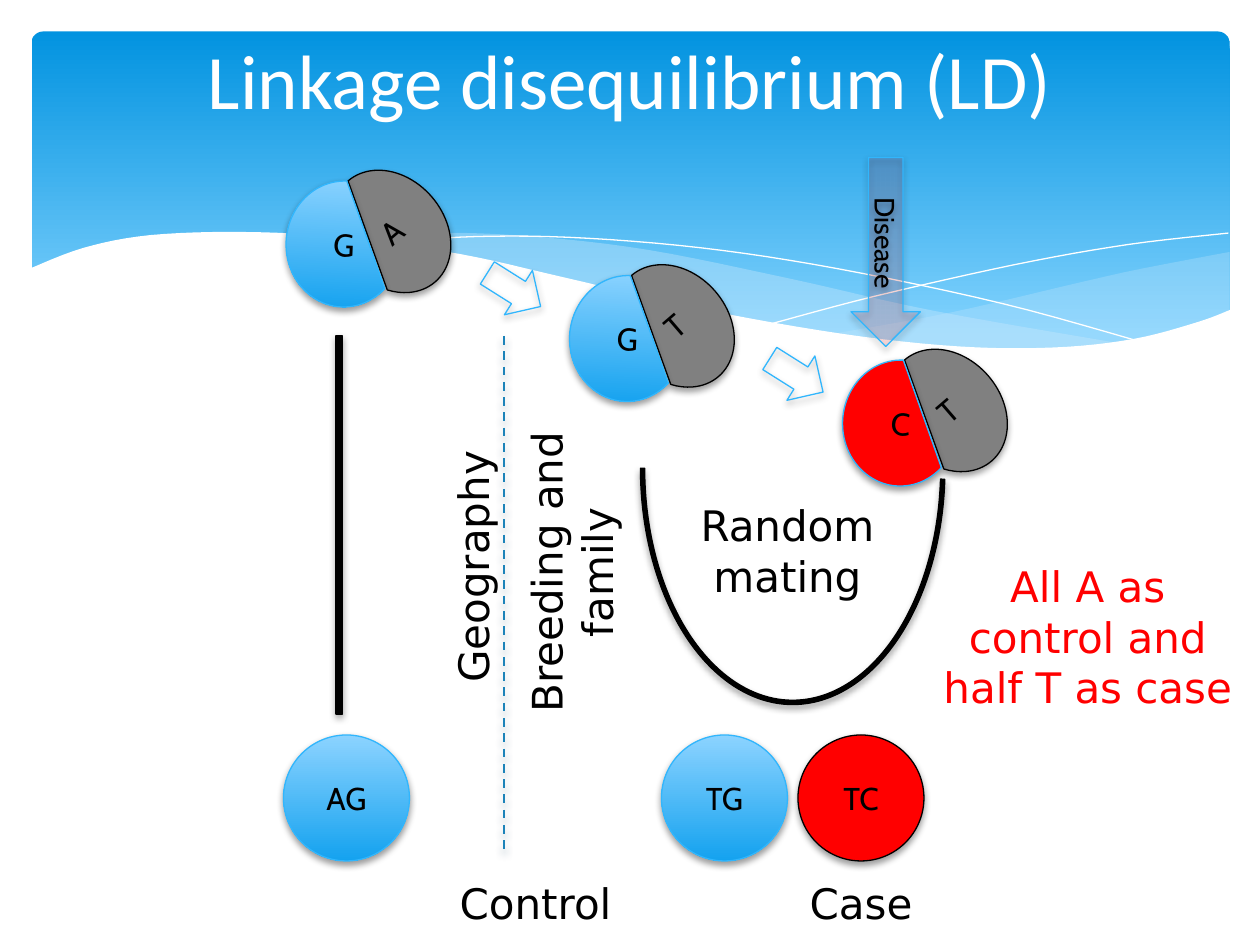
from lxml.etree import SubElement
from pptx import Presentation
from pptx.dml.color import RGBColor
from pptx.enum.dml import MSO_LINE
from pptx.enum.shapes import MSO_CONNECTOR, MSO_SHAPE as SHAPE
from pptx.enum.text import MSO_ANCHOR as ANCHOR, MSO_AUTO_SIZE as AUTO, PP_ALIGN
from pptx.oxml.ns import qn
from pptx.util import Inches, Pt

BLACK = RGBColor(0x00, 0x00, 0x00)
WHITE = RGBColor(0xFF, 0xFF, 0xFF)
RED = RGBColor(0xFF, 0x00, 0x00)
GRAY = RGBColor(0x80, 0x80, 0x80)
SKY = RGBColor(0x31, 0xB6, 0xFD)
DIVIDER = RGBColor(0x1C, 0x83, 0xB9)
DIVIDER_SHADOW = RGBColor(0x0F, 0x40, 0x5B)
MIST = RGBColor(0xC6, 0xE7, 0xFC)
# Gradients: (top colour, bottom colour, end position)
BANNER = (RGBColor(0x02, 0x93, 0xE0), RGBColor(0x83, 0xD3, 0xFE), 0.9)
BALL = (RGBColor(0x8C, 0xD3, 0xFF), RGBColor(0x14, 0xA2, 0xEF), 1)

COLS, ROWS = 120, 90  # grid cells of 1/12 inch
SHADOW = (BLACK, 38, 4, 2)  # colour, opacity %, blur pt, distance pt


def smooth(knots, steps=6):
    """Sample a Catmull-Rom curve that passes through the knots."""
    ends = [knots[0], *knots, knots[-1]]
    points = [knots[0]]
    for a, b, c, d in zip(ends, ends[1:], ends[2:], ends[3:]):
        for i in range(1, steps + 1):
            t = i / steps
            points.append(tuple(
                (2 * q + (r - p) * t + (2 * p - 5 * q + 4 * r - s) * t ** 2
                 + (3 * q - p - 3 * r + s) * t ** 3) / 2
                for p, q, r, s in zip(a, b, c, d)))
    return points


class Canvas:
    """Draws on one slide; all lengths are grid columns and rows."""

    label = {"name": "Cabin", "size": Pt(18)}
    note = {"name": "DejaVu Sans", "size": Pt(24)}

    def __init__(self, prs):
        self.slide = prs.slides.add_slide(prs.slide_layouts[6])
        self.shapes = self.slide.shapes
        self.cell_w, self.cell_h = prs.slide_width / COLS, prs.slide_height / ROWS

    def emu(self, *lengths):
        """Turn alternating columns and rows into EMU."""
        return [round(n * (self.cell_h if i % 2 else self.cell_w))
                for i, n in enumerate(lengths)]

    def paint(self, sp, fill, line, alpha=None, width=0.75):
        if fill is None:
            sp.fill.background()
        elif isinstance(fill, RGBColor):
            sp.fill.solid()
            sp.fill.fore_color.rgb = fill
            if alpha:
                color = sp._element.spPr.find(qn("a:solidFill"))[0]
                SubElement(color, qn("a:alpha"), val=str(alpha * 1000))
        else:
            sp.fill.gradient()
            sp.fill.gradient_angle = 270
            for stop, color, place in zip(sp.fill.gradient_stops, fill, (0, fill[2])):
                stop.color.rgb, stop.position = color, place
        if line is None:
            sp.line.fill.background()
        else:
            sp.line.color.rgb, sp.line.width = line, Pt(width)
        sp.shadow.inherit = False

    def cast_shadow(self, sp, color, opacity, blur, dist):
        spPr = sp._element.spPr
        effects = spPr.find(qn("a:effectLst"))
        if effects is None:
            effects = SubElement(spPr, qn("a:effectLst"))
        shadow = SubElement(effects, qn("a:outerShdw"), blurRad=str(Pt(blur)),
                            dist=str(Pt(dist)), dir="5400000", rotWithShape="0")
        rgb = SubElement(shadow, qn("a:srgbClr"), val=str(color))
        SubElement(rgb, qn("a:alpha"), val=str(opacity * 1000))

    def fill_text(self, sp, text, fmt, color, anchor):
        tf = sp.text_frame
        tf.word_wrap, tf.vertical_anchor = True, anchor
        p = tf.paragraphs[0]
        p.alignment = PP_ALIGN.CENTER
        r = p.add_run()
        r.text = text
        r.font.color.rgb = color
        for key, value in fmt.items():
            setattr(r.font, key, value)
        return tf

    def shape(self, kind, box, fill, line, text="", rot=0, flip=None, adj=(),
              alpha=None, shadow=SHADOW, **fmt):
        sp = self.shapes.add_shape(kind, *self.emu(*box))
        sp.rotation = rot
        for i, value in enumerate(adj):
            sp.adjustments[i] = value
        if flip:
            sp._element.spPr.xfrm.set(flip, "1")
        self.paint(sp, fill, line, alpha)
        if shadow:
            self.cast_shadow(sp, *shadow)
        if text:
            self.fill_text(sp, text, self.label | fmt, BLACK, ANCHOR.MIDDLE)

    def text(self, box, text, color=BLACK, rot=0, anchor=ANCHOR.TOP, grow=True, **fmt):
        sp = self.shapes.add_textbox(*self.emu(*box))
        sp.rotation = rot
        tf = self.fill_text(sp, text, self.note | fmt, color, anchor)
        tf.auto_size = AUTO.SHAPE_TO_FIT_TEXT if grow else AUTO.NONE

    def outline(self, points, fill=None, line=None, alpha=None):
        """Draw a closed filled area, or an open hairline if there is no fill."""
        start, *rest = [self.emu(*point) for point in points]
        builder = self.shapes.build_freeform(*start)
        builder.add_line_segments(rest, close=fill is not None)
        self.paint(builder.convert_to_shape(), fill, line, alpha, width=0)

    def dashed_line(self, *ends):
        cx = self.shapes.add_connector(MSO_CONNECTOR.STRAIGHT, *self.emu(*ends))
        cx.line.color.rgb, cx.line.width = DIVIDER, Pt(1.25)
        cx.line.dash_style = MSO_LINE.DASH
        self.cast_shadow(cx, DIVIDER_SHADOW, 48, 4.5, 3)

    def allele_pair(self, x, y, left, right, fill=BALL):
        """Two chords that lean together, as one split ball."""
        self.shape(SHAPE.CHORD, (x + 5, y, 10.1, 12.7), GRAY, BLACK, right,
                   rot=319.2, flip="flipH")
        self.shape(SHAPE.CHORD, (x, y + 1.55, 11.05, 12), fill, SKY, left, rot=2.5)


def draw_banner(c):
    c.shape(SHAPE.ROUNDED_RECTANGLE, (3, 3, 114.1, 32.4), BANNER, None,
            adj=[0.034], shadow=None)
    right_top = [(117.1, 24), (108.7, 25.6), (103.3, 26.8), (90.4, 29.8), (79.3, 31.8)]
    right_low = [(79.3, 31.8), (89.4, 32.9), (97.7, 33.4), (106, 33.1),
                 (112.2, 31.4), (117.1, 29.6)]
    long_top = [(34.3, 22.9), (41.3, 22.2), (50.4, 22.5), (61.7, 23.8),
                (75.5, 26.6), (88.9, 29.6), (107.2, 32.8)]
    long_low = [(107.2, 32.8), (98.2, 33.4), (88.3, 33.1), (78, 31.7), (67.9, 29.8),
                (53.9, 26.6), (46, 24.8), (38.8, 23.5), (34.3, 22.9)]
    c.outline(smooth(right_top) + smooth(right_low), MIST, alpha=29)
    c.outline(smooth(long_top) + smooth(long_low), MIST, alpha=40)
    for thread in (
        [(37.1, 23.4), (43.6, 22.6), (54, 22.6), (66.7, 23.6), (79.8, 25.6),
         (95.4, 28.9), (108.8, 32.6)],
        [(73.6, 30.8), (83.4, 28.2), (96.7, 25.2), (107.4, 23.3), (117, 22.2)],
    ):
        c.outline(smooth(thread), line=WHITE)
    wave = [(2.8, 25.6), (8, 23.6), (14.3, 22.4), (23.2, 22.1), (32.5, 22.6),
            (43.8, 24.2), (53.6, 26.4), (66.6, 29.4), (80.2, 31.8), (91.3, 33),
            (100.4, 33.1), (107.9, 32.3), (114, 30.7), (117.2, 29.5)]
    c.outline(smooth(wave) + [(117.2, 39.5), (2.8, 39.5)], WHITE)
    c.text((6, 0, 108, 15), "Linkage disequilibrium (LD)", WHITE, anchor=ANCHOR.MIDDLE,
           grow=False, name="Calibri", size=Pt(44))


def draw_diagram(c):
    c.allele_pair(27.25, 15.7, "G", "A")
    c.allele_pair(54.25, 24.7, "G", "T")
    c.allele_pair(80.25, 32.75, "C", "T", RED)
    for x, y in ((45.95, 25.1), (72.85, 33.25)):
        c.shape(SHAPE.RIGHT_ARROW, (x, y, 6, 5), None, SKY, rot=32.2)
    c.shape(SHAPE.BLOCK_ARC, (61, 22.1, 29, 45), BLACK, BLACK, flip="flipV",
            adj=[108, 213.5, 0.014])
    c.shape(SHAPE.RECTANGLE, (32, 32, 0.6, 36), BLACK, BLACK)
    for x, text, fill, line in ((27, "AG", BALL, SKY), (63, "TG", BALL, SKY),
                                (76, "TC", RED, BLACK)):
        c.shape(SHAPE.OVAL, (x, 70, 12, 12), fill, line, text)
    for x, y, text in ((59, 47, "Random mating"), (35, 83, "Control"), (66, 83, "Case")):
        c.text((x, y, 32, 4.8), text)
    c.dashed_line(48, 32, 48, 81)
    c.text((28.4, 51.6, 32, 4.8), "Geography", rot=270)
    c.text((31.9, 52.1, 39, 4.8), "Breeding and family", rot=270)
    c.shape(SHAPE.RIGHT_ARROW, (75.35, 20.7, 18, 6.6), RED, SKY, "Disease", rot=90,
            alpha=12, size=Pt(16))
    c.text((87.6, 52.8, 32, 15.7), "All A as control and half T as case", RED)


def main():
    prs = Presentation()
    prs.slide_width, prs.slide_height = Inches(10), Inches(7.5)
    canvas = Canvas(prs)
    draw_banner(canvas)
    draw_diagram(canvas)
    prs.save("out.pptx")


if __name__ == "__main__":
    main()
